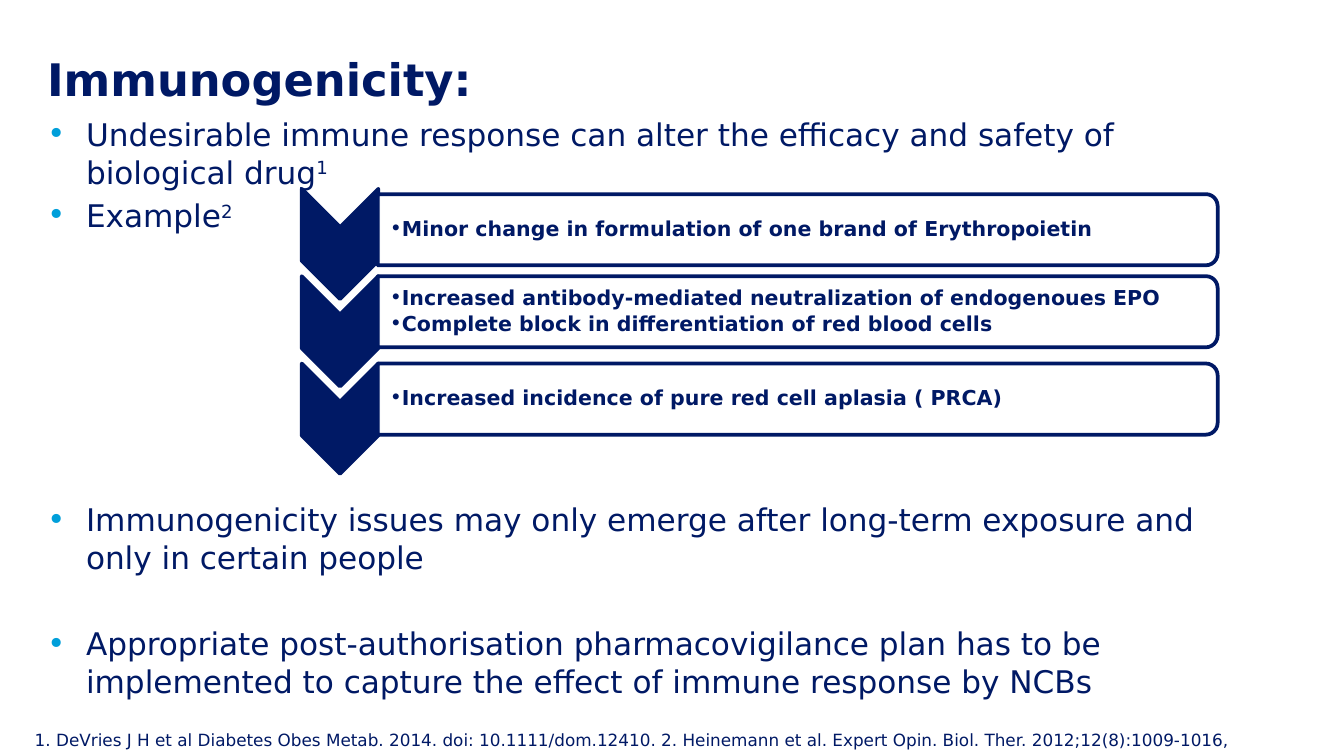
from lxml.etree import SubElement
from pptx import Presentation
from pptx.dml.color import RGBColor
from pptx.enum.shapes import MSO_SHAPE
from pptx.enum.text import MSO_ANCHOR
from pptx.oxml.ns import qn
from pptx.util import Inches, Pt

NAVY, BLUE, WHITE = "001965", "009FDA", "FFFFFF"
FONT = "DejaVu Sans"

# Text, superscript, points of space before
POINTS = [
    ("Undesirable immune response can alter the efficacy and safety of biological drug", "1", 0),
    ("Example", "2", 3.3),
    ("Immunogenicity issues may only emerge after long-term exposure and only in certain people",
     "", 143),
    ("Appropriate post-authorisation pharmacovigilance plan has to be implemented "
     "to capture the effect of immune response by NCBs", "", 26.3),
]
# Middle of the panel, lines of text
STEPS = [
    (1.71, ["Minor change in formulation of one brand of Erythropoietin"]),
    (2.32, ["Increased antibody-mediated neutralization of endogenoues EPO",
            "Complete block in differentiation of red blood cells"]),
    (2.97, ["Increased incidence of pure red cell aplasia ( PRCA)"]),
]
SOURCE = ("1. DeVries J H et al Diabetes Obes Metab. 2014. doi: 10.1111/dom.12410. "
          "2. Heinemann et al. Expert Opin. Biol. Ther. 2012;12(8):1009-1016,")


def color(code):
    return RGBColor.from_string(code)


def bullet(para, indent, tint):
    props = para._p.get_or_add_pPr()
    props.set("marL", str(Inches(indent)))
    props.set("indent", str(-Inches(indent)))
    fill = SubElement(props, qn("a:buClr"))
    SubElement(fill, qn("a:srgbClr"), val=tint)
    SubElement(props, qn("a:buFont"), typeface=FONT)
    SubElement(props, qn("a:buChar"), char="•")


def add_text(slide, box, items, size, bold=False, inset=(0, 0, 0, 0), anchor=MSO_ANCHOR.TOP,
             wrap=True, indent=0, tint=NAVY, line=None, after=None):
    """Add a text box; each item is (text, superscript, space before)."""
    frame = slide.shapes.add_textbox(*map(Inches, box)).text_frame
    frame.word_wrap = wrap
    frame.vertical_anchor = anchor
    (frame.margin_left, frame.margin_top,
     frame.margin_right, frame.margin_bottom) = map(Inches, inset)
    for i, (text, mark, gap) in enumerate(items):
        para = frame.add_paragraph() if i else frame.paragraphs[0]
        if line:
            para.line_spacing = line
        if gap:
            para.space_before = Pt(gap)
        if after:
            para.space_after = Pt(after)
        if indent:
            bullet(para, indent, tint)
        for part in filter(None, (text, mark)):
            run = para.add_run()
            run.text = part
            font = run.font
            font.name, font.size, font.bold = FONT, Pt(size), bold
            font.color.rgb = color(NAVY)
        if mark:
            run._r.get_or_add_rPr().set("baseline", "30000")


def add_block(slide, kind, box, fill, alpha=None):
    """Add an outlined shape turned a quarter clockwise."""
    shape = slide.shapes.add_shape(kind, *map(Inches, box))
    shape.rotation = 90
    shape.shadow.inherit = False
    shape.fill.solid()
    shape.fill.fore_color.rgb = color(fill)
    if alpha:
        tone = shape.fill._xPr.find(qn("a:solidFill"))[0]
        SubElement(tone, qn("a:alpha"), val=str(alpha * 1000))
    shape.line.color.rgb = color(NAVY)
    shape.line.width = Pt(2)


def add_step(slide, row, mid, lines):
    add_block(slide, MSO_SHAPE.CHEVRON, (2.12, 1.53 + row * 0.65, 0.82, 0.57), NAVY)
    add_block(slide, MSO_SHAPE.ROUND_2_SAME_RECTANGLE,
              (5.67, mid - 6.25 / 2, 0.53, 6.25), WHITE, alpha=90)
    add_text(slide, (2.81, mid - 0.24, 6.22, 0.48), [(text, "", 0) for text in lines], 11,
             bold=True, inset=(0.09, 0.01, 0.01, 0.01), anchor=MSO_ANCHOR.MIDDLE,
             indent=0.06, line=0.9, after=2)


def main():
    deck = Presentation()
    deck.slide_width = Inches(10)
    deck.slide_height = Inches(10 * 9 / 16)
    slide = deck.slides.add_slide(deck.slide_layouts[6])
    add_text(slide, (0.35, 0.86, 9.31, 4.4), POINTS, 16.7, inset=(0, 0, 0.27, 0),
             indent=0.29, tint=BLUE)
    add_text(slide, (0.35, 0.37, 9.31, 0.43), [("Immunogenicity:", "", 0)], 24, bold=True,
             anchor=MSO_ANCHOR.MIDDLE)
    for row, (mid, lines) in enumerate(STEPS):
        add_step(slide, row, mid, lines)
    add_text(slide, (0.16, 5.38, 9.38, 0.4), [(SOURCE, "", 0)], 9,
             inset=(0.1, 0.05, 0.1, 0.05), wrap=False)
    deck.save("out.pptx")


if __name__ == "__main__":
    main()
